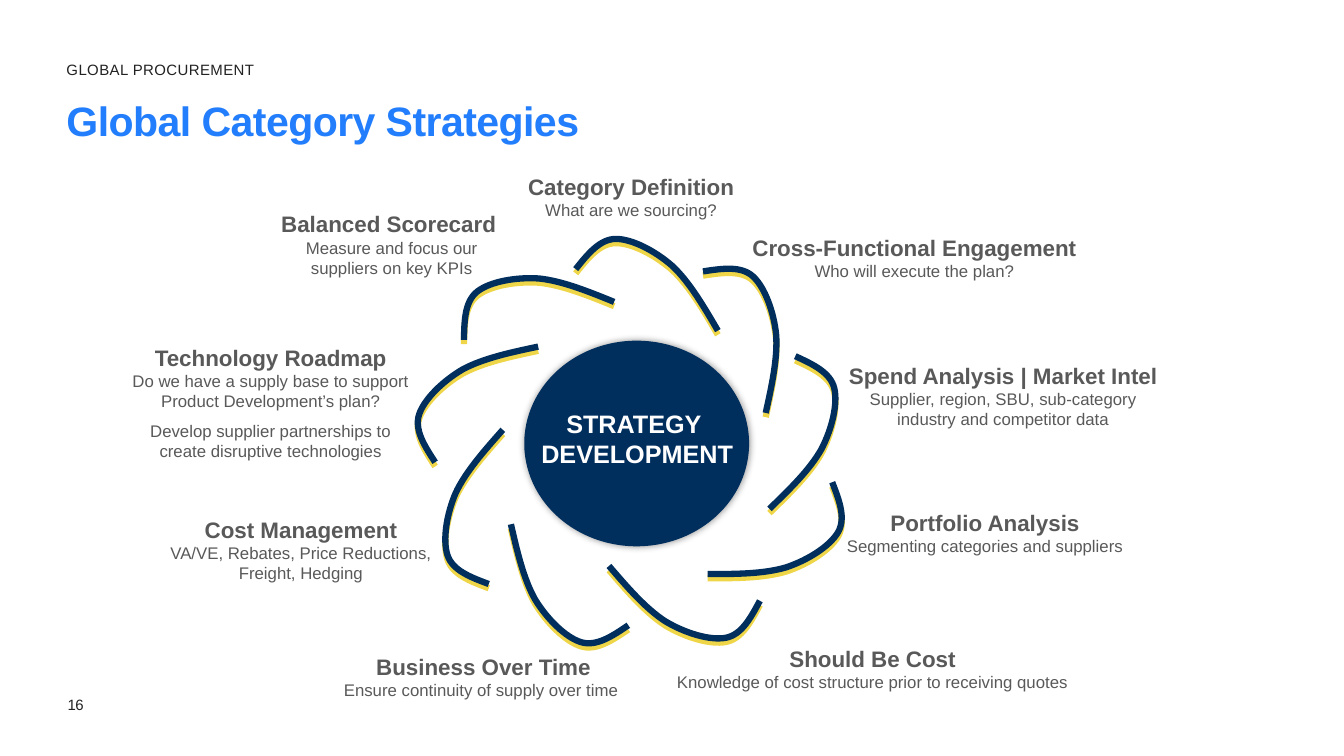
from lxml.etree import SubElement
from pptx import Presentation
from pptx.dml.color import RGBColor
from pptx.enum.shapes import MSO_SHAPE
from pptx.enum.text import PP_ALIGN
from pptx.oxml.ns import qn
from pptx.util import Inches, Pt

NAVY, GOLD, GRAY, INK, BLUE = "002F5E", "EFD648", "595959", "222222", "227EFC"

BEND = [(0, 30), (12, 15), (24, 0), (40, 0), (56, 0), (79, 12), (96, 27),
        (113, 43), (127, 67), (141, 91)]

ARCS = [(5.71, 2.37, 0), (6.68, 2.83, 42.7), (7.2, 3.8, 76.2),
        (7.06, 4.86, 120.2), (6.11, 5.48, 169.6), (4.9, 5.39, 197.3),
        (4.07, 4.62, 251.8), (3.98, 3.51, 288.3), (4.55, 2.61, 322.4)]

STEPS = [
    ((7.35, 2.27, 3.44, 0.57), "Cross-Functional Engagement",
     ["Who will execute the plan?"], 0),
    ((5.03, 1.67, 2.46, 0.57), "Category Definition",
     ["What are we sourcing?"], 0),
    ((8.28, 3.54, 3.34, 0.77), "Spend Analysis | Market Intel",
     ["Supplier, region, SBU, sub-category",
      "industry and competitor data"], 0),
    ((8.21, 5, 3.12, 0.57), "Portfolio Analysis",
     ["Segmenting categories and suppliers"], 0),
    ((6.55, 6.35, 4.21, 0.57), "Should Be Cost",
     ["Knowledge of cost structure prior to receiving quotes"], 0),
    ((3.02, 6.43, 3.55, 0.57), "Business Over Time",
     ["Ensure continuity of supply over time "], 0),
    ((1.57, 5.07, 2.83, 0.77), "Cost Management",
     ["VA/VE, Rebates, Price Reductions, Freight, Hedging"], 0),
    ((1.18, 3.36, 3.01, 1.28), "Technology Roadmap",
     ["Do we have a supply base to support Product Development’s plan?",
      "Develop supplier partnerships to create disruptive technologies"], 7),
    ((2.64, 2.04, 2.49, 0.77), "Balanced Scorecard ",
     ["Measure and focus our suppliers on key KPIs"], 0),
]


def color(code):
    """Turn a hex string into a colour."""
    return RGBColor.from_string(code)


def style(par, size, code, bold=False, track=0):
    """Format the runs of a paragraph."""
    for run in par.runs:
        font = run.font
        font.name, font.size, font.bold = "Arial", Pt(size), bold
        font.color.rgb = color(code)
        if track:
            run._r.get_or_add_rPr().set("spc", str(round(track * 100)))


def text(slide, box, lines, wrap=True, inset=True):
    """Add a text box with one paragraph per line."""
    frame = slide.shapes.add_textbox(*map(Inches, box)).text_frame
    frame.word_wrap = wrap
    if not inset:
        frame.margin_left = frame.margin_right = 0
        frame.margin_top = frame.margin_bottom = 0
    frame.text = "\n".join(lines)
    return frame.paragraphs


def shade(shape, code, alpha, blur, dist, angle):
    """Give a shape an outer shadow that keeps its direction."""
    shape.shadow.inherit = False
    effects = shape._element.spPr.find(qn("a:effectLst"))
    outer = SubElement(effects, qn("a:outerShdw"), blurRad=str(Pt(blur)),
                       dist=str(Pt(dist)), dir=str(angle * 60000),
                       algn="ctr", rotWithShape="0")
    tint = SubElement(outer, qn("a:srgbClr"), val=code)
    SubElement(tint, qn("a:alpha"), val=str(alpha * 1000))


def arc(slide, left, top, turn):
    """Draw one curved blade of the wheel."""
    pen = slide.shapes.build_freeform(*BEND[0], scale=Inches(0.01))
    pen.add_line_segments(BEND[1:], close=False)
    blade = pen.convert_to_shape(Inches(left), Inches(top))
    path = blade._element.spPr.find(".//" + qn("a:path"))
    lines = path.findall(qn("a:lnTo"))
    for start in range(0, len(lines), 3):
        curve = SubElement(path, qn("a:cubicBezTo"))
        for line in lines[start:start + 3]:
            curve.append(line[0])
            path.remove(line)
    blade.rotation = turn
    blade.fill.background()
    blade.line.color.rgb = color(NAVY)
    blade.line.width = Pt(4.5)
    shade(blade, GOLD, 100, 0, 3, 90)


def hub(slide, box):
    """Draw the centre disc and its label."""
    left, top, width, height = box
    disc = slide.shapes.add_shape(MSO_SHAPE.OVAL, *map(Inches, box))
    disc.fill.solid()
    disc.fill.fore_color.rgb = color(NAVY)
    disc.line.fill.background()
    shade(disc, "000000", 40, 5, 0, 0)
    label = (left - 0.07, top + 0.62, width + 0.15, 0.71)
    for par in text(slide, label, ["STRATEGY ", "DEVELOPMENT"]):
        par.alignment = PP_ALIGN.CENTER
        style(par, 18, "FFFFFF", True)


def step(slide, box, name, notes, gap):
    """Write a step's heading with its notes below."""
    pars = text(slide, box, [name, *notes])
    for par in pars:
        par.alignment = PP_ALIGN.CENTER
        style(par, 12, GRAY)
    style(pars[0], 16, GRAY, True)
    if gap:
        pars[-1].space_before = Pt(gap)


def header(slide, box):
    """Write the section name and the title."""
    left, top, width, height = box
    par = text(slide, (left, top, width, 0.4), ["GLOBAL PROCUREMENT"],
               inset=False)[0]
    par.line_spacing = 1.1
    style(par, 10.7, INK, track=0.3)
    par = text(slide, (left, top + height - 0.4, width, 0.4),
               ["Global Category Strategies"], inset=False)[0]
    par.line_spacing = 0.9
    style(par, 29.3, BLUE, True, -0.4)


def footer(slide, box):
    """Write the page number."""
    par = text(slide, box, ["16"], wrap=False, inset=False)[0]
    style(par, 10.7, INK, track=-0.3)


def main():
    """Build and save the slide."""
    deck = Presentation()
    deck.slide_width, deck.slide_height = Inches(13.33), Inches(7.5)
    slide = deck.slides.add_slide(deck.slide_layouts[6])
    footer(slide, (0.67, 6.9, 0.26, 0.2))
    hub(slide, (5.2, 3.38, 2.23, 2.04))
    for place in ARCS:
        arc(slide, *place)
    for item in STEPS:
        step(slide, *item)
    header(slide, (0.66, 0.58, 12, 0.82))
    deck.save("out.pptx")


if __name__ == "__main__":
    main()
